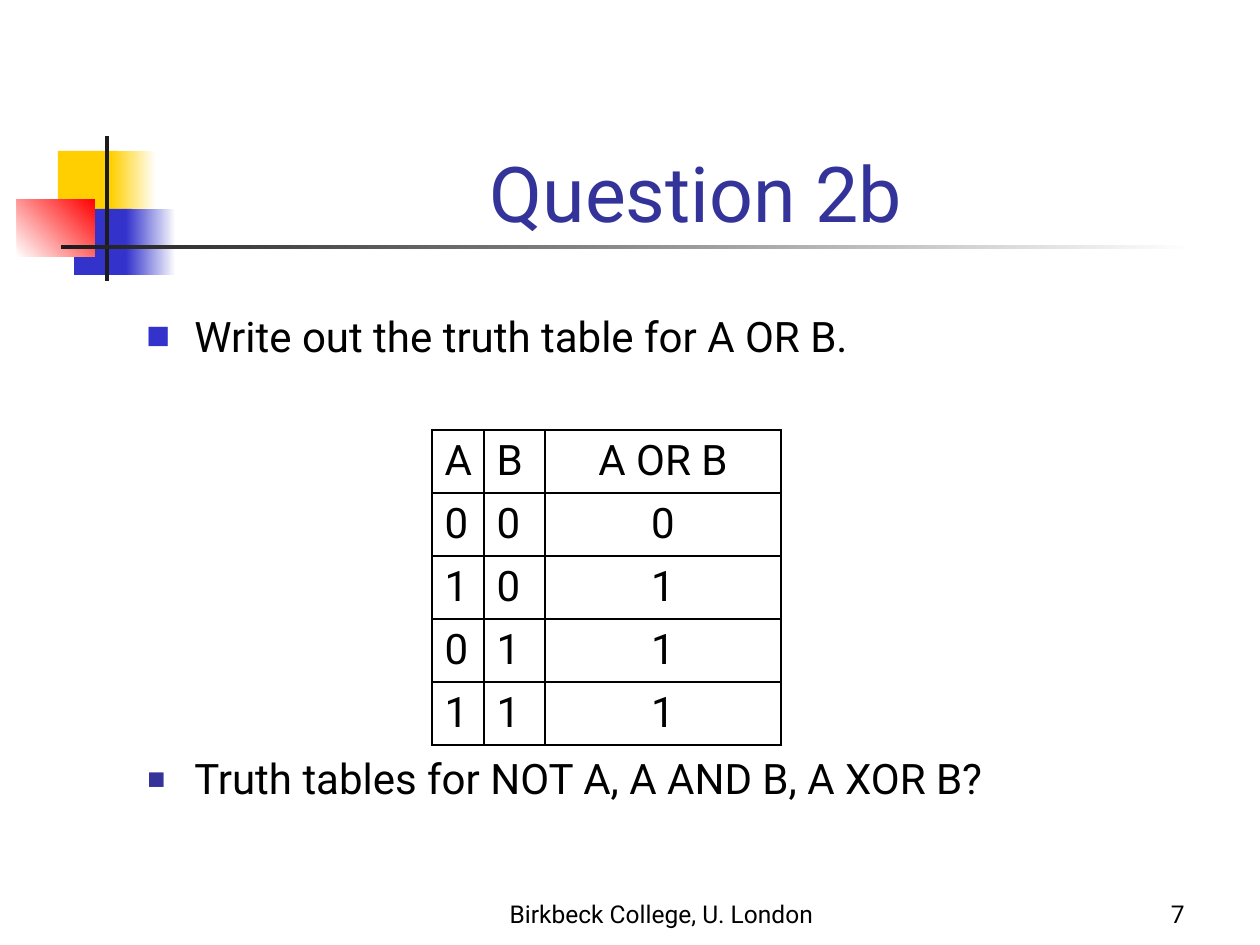
from dataclasses import dataclass
from typing import NamedTuple

from lxml.etree import SubElement
from pptx import Presentation
from pptx.dml.color import RGBColor
from pptx.enum.shapes import MSO_SHAPE as Shape
from pptx.enum.text import MSO_ANCHOR as Anchor, PP_ALIGN as Align
from pptx.oxml.ns import qn
from pptx.util import Emu, Pt


@dataclass(frozen=True)
class Theme:
    font: str = "Roboto"
    title: str = "333399"
    text: str = "000000"
    white: str = "FFFFFF"
    yellow: str = "FFCF01"
    blue: str = "3333CC"
    red: str = "FF0000"
    dark: str = "1C1C1C"
    title_size: int = 44
    body_size: int = 24
    footer_size: int = 14


class Box(NamedTuple):
    left: int
    top: int
    width: int
    height: int


class Block(NamedTuple):
    box: Box
    start: str
    end: str = ""
    angle: int = 0


class Bullet(NamedTuple):
    char: str
    color: str
    percent: int


class Label(NamedTuple):
    box: Box
    text: str
    size: int
    align: Align = Align.LEFT
    anchor: Anchor = Anchor.TOP
    bullet: Bullet | None = None


THEME = Theme()
PX = 914400 / 126
INDENT = 48
BLOCKS = (
    Block(Box(58, 151, 60, 66), THEME.yellow),
    Block(Box(111, 151, 45, 66), THEME.yellow, THEME.white),
    Block(Box(74, 209, 58, 66), THEME.blue),
    Block(Box(126, 209, 50, 66), THEME.blue, THEME.white),
    Block(Box(17, 199, 78, 58), THEME.white, THEME.red, 45),
    Block(Box(105, 136, 4, 145), THEME.dark),
    Block(Box(61, 245, 1134, 4), THEME.dark, THEME.white),
)
LABELS = (
    Label(Box(134, 304, 1019, 110), "Write out the truth table for A OR B.",
          THEME.body_size, bullet=Bullet("■", THEME.blue, 60)),
    Label(Box(462, 872, 399, 63), "Birkbeck College, U. London",
          THEME.footer_size, Align.CENTER, Anchor.BOTTOM),
    Label(Box(935, 872, 262, 63), "7", THEME.footer_size, Align.RIGHT, Anchor.BOTTOM),
    Label(Box(134, 746, 882, 63), "Truth tables for NOT A, A AND B, A XOR B?",
          THEME.body_size, bullet=Bullet("▪", THEME.title, 120)),
)
INPUTS = ((0, 0), (1, 0), (0, 1), (1, 1))
TRUTH_ROWS = (("A", "B", "A OR B"), *((a, b, a | b) for a, b in INPUTS))
COLUMN_WIDTHS = (52, 61, 236)
ROW_HEIGHT = 62


def px(length: int) -> Emu:
    return Emu(round(length * PX))


def rgb(color: str) -> RGBColor:
    return RGBColor.from_string(color)


def write(frame, text: str, size: int, align: Align, color: str = THEME.text):
    paragraph = frame.paragraphs[0]
    paragraph.alignment = align
    run = paragraph.add_run()
    run.text = text
    for key, value in {"name": THEME.font, "size": Pt(size), "bold": False}.items():
        setattr(run.font, key, value)
    run.font.color.rgb = rgb(color)
    return paragraph


def draw_block(slide, block: Block) -> None:
    shape = slide.shapes.add_shape(Shape.RECTANGLE, *map(px, block.box))
    shape.shadow.inherit = False
    shape.line.fill.background()
    if not block.end:
        shape.fill.solid()
        shape.fill.fore_color.rgb = rgb(block.start)
        return
    shape.fill.gradient()
    shape.fill.gradient_angle = block.angle
    for stop, color in zip(shape.fill.gradient_stops, (block.start, block.end)):
        stop.color.rgb = rgb(color)


def add_bullet(paragraph, bullet: Bullet) -> None:
    props = paragraph._p.get_or_add_pPr()
    props.set("marL", str(px(INDENT)))
    props.set("indent", str(-px(INDENT)))
    SubElement(SubElement(props, qn("a:buClr")), qn("a:srgbClr"), val=bullet.color)
    SubElement(props, qn("a:buSzPct"), val=str(bullet.percent * 1000))
    SubElement(props, qn("a:buFont"), typeface=THEME.font)
    SubElement(props, qn("a:buChar"), char=bullet.char)


def draw_label(slide, label: Label) -> None:
    frame = slide.shapes.add_textbox(*map(px, label.box)).text_frame
    frame.word_wrap = True
    frame.vertical_anchor = label.anchor
    paragraph = write(frame, label.text, label.size, label.align)
    if label.bullet:
        add_bullet(paragraph, label.bullet)


def outline(cell) -> None:
    props = cell._tc.get_or_add_tcPr()
    for side in ("lnL", "lnR", "lnT", "lnB"):
        line = SubElement(props, qn(f"a:{side}"), w=str(Pt(1)))
        SubElement(SubElement(line, qn("a:solidFill")), qn("a:srgbClr"), val=THEME.text)


def draw_truth_table(slide) -> None:
    box = Box(432, 430, sum(COLUMN_WIDTHS), ROW_HEIGHT * len(TRUTH_ROWS))
    table = slide.shapes.add_table(
        len(TRUTH_ROWS), len(COLUMN_WIDTHS), *map(px, box)).table
    table.first_row = table.horz_banding = False
    for column, width in zip(table.columns, COLUMN_WIDTHS):
        column.width = px(width)
    for row, values in zip(table.rows, TRUTH_ROWS):
        row.height = px(ROW_HEIGHT)
        for cell, value, align in zip(row.cells, values, (Align.LEFT, Align.LEFT, Align.CENTER)):
            outline(cell)
            cell.fill.background()
            write(cell.text_frame, str(value), THEME.body_size, align)


def draw_title(slide) -> None:
    title = slide.shapes.title
    for key, value in zip(Box._fields, Box(159, 86, 1074, 158)):
        setattr(title, key, px(value))
    title.text_frame.vertical_anchor = Anchor.BOTTOM
    write(title.text_frame, "Question 2b", THEME.title_size, Align.CENTER, THEME.title)


def main() -> None:
    """Build the truth table question slide."""
    deck = Presentation()
    deck.slide_width, deck.slide_height = px(1260), px(945)
    slide = deck.slides.add_slide(deck.slide_layouts[5])
    for block in BLOCKS:
        draw_block(slide, block)
    draw_title(slide)
    for label in LABELS:
        draw_label(slide, label)
    draw_truth_table(slide)
    deck.save("out.pptx")


if __name__ == "__main__":
    main()
